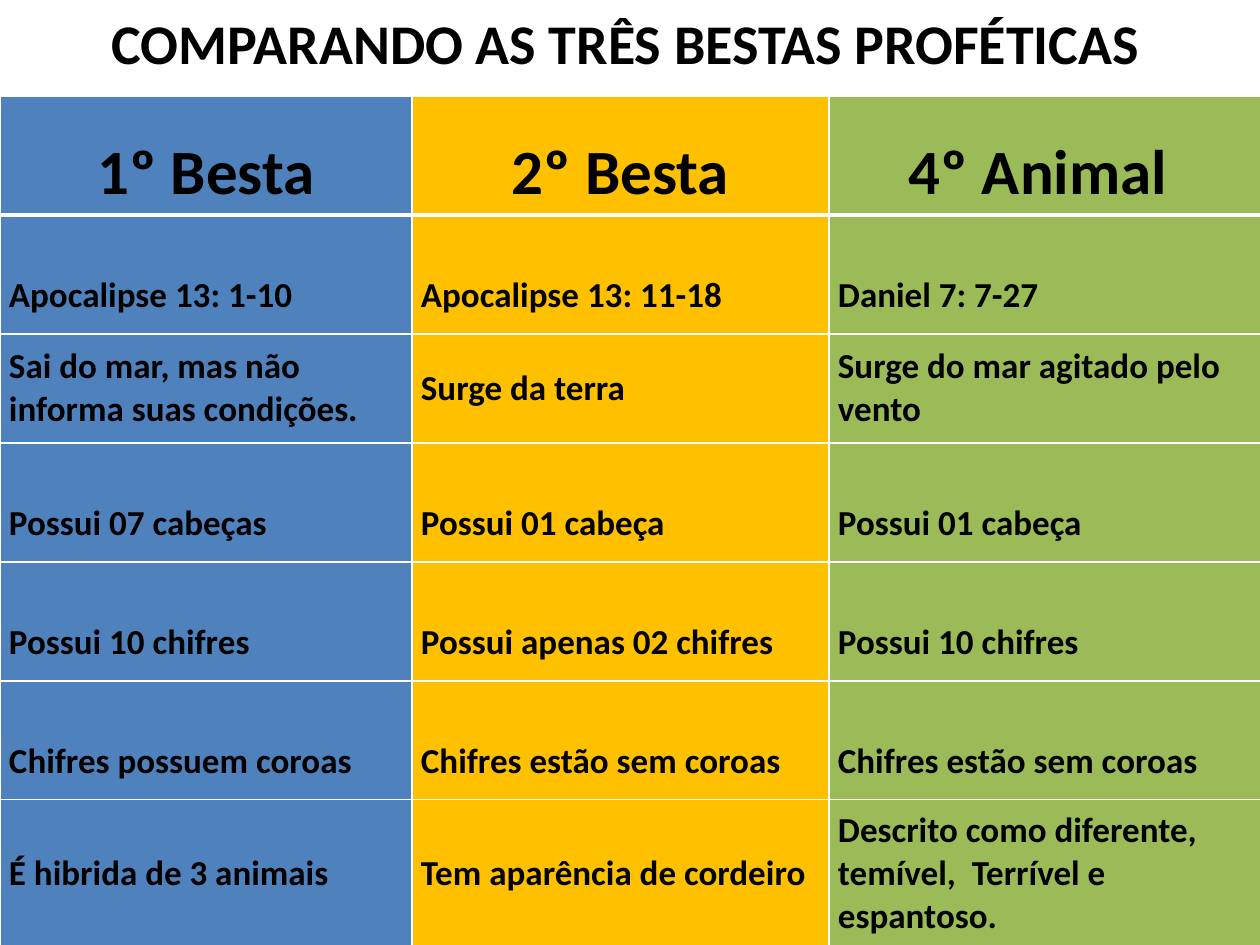
from lxml.etree import SubElement
from pptx import Presentation
from pptx.dml.color import RGBColor
from pptx.enum.text import MSO_ANCHOR as Anchor, MSO_AUTO_SIZE as AutoSize, PP_ALIGN as Align
from pptx.oxml.ns import qn
from pptx.util import Emu, Pt

PX_PER_INCH = 126
BLACK = RGBColor(0x00, 0x00, 0x00)
WHITE = RGBColor(0xFF, 0xFF, 0xFF)
BLUE = RGBColor(0x4F, 0x81, 0xBD)
GOLD = RGBColor(0xFF, 0xC0, 0x00)
GREEN = RGBColor(0x9B, 0xBB, 0x59)

COLUMNS = [(412, BLUE), (417, GOLD), (432, GREEN)]
# Row height, line spacing, one text per column; the first row is the header.
ROWS = [
    (119, 1.5, ["1º Besta", "2º Besta", "4º Animal "]),
    (119, 2.0, ["Apocalipse 13: 1-10", "Apocalipse 13: 11-18", "Daniel 7: 7-27"]),
    (109, 1.0, ["Sai do mar, mas não informa suas condições.", "Surge da terra",
                "Surge do mar agitado pelo vento"]),
    (119, 2.0, ["Possui 07 cabeças", "Possui 01 cabeça", "Possui 01 cabeça"]),
    (119, 2.0, ["Possui 10 chifres", "Possui apenas 02 chifres", "Possui 10 chifres"]),
    (119, 2.0, ["Chifres possuem coroas", "Chifres estão sem coroas",
                "Chifres estão sem coroas"]),
    (148, 1.0, ["É hibrida de 3 animais", "Tem aparência de cordeiro",
                "Descrito como diferente, temível,  Terrível e espantoso."]),
]


def px(n):
    return Emu(round(n * 914400 / PX_PER_INCH))


class SlideBuilder:
    font = "Calibri"
    color = BLACK

    def __init__(self, slide):
        self.slide = slide

    def text(self, tf, text, size, align=Align.LEFT, spacing=1.0):
        p = tf.paragraphs[0]
        p.alignment = align
        p.line_spacing = spacing
        r = p.add_run()
        r.text = text
        r.font.name = self.font
        r.font.size = Pt(size)
        r.font.bold = True
        r.font.color.rgb = self.color

    def title(self, text, x, y, w, h):
        sp = self.slide.shapes.title
        sp.left, sp.top, sp.width, sp.height = px(x), px(y), px(w), px(h)
        tf = sp.text_frame
        tf.word_wrap = True
        tf.auto_size = AutoSize.SHAPE_TO_FIT_TEXT
        tf.vertical_anchor = Anchor.TOP
        self.text(tf, text, 32, Align.CENTER)

    def borders(self, cell, top, bottom):
        """Draw white cell borders; top and bottom widths are in points."""
        tc_pr = cell._tc.get_or_add_tcPr()
        for tag, width in (("lnL", 1), ("lnR", 1), ("lnT", top), ("lnB", bottom)):
            ln = SubElement(tc_pr, qn(f"a:{tag}"), w=str(Pt(width)))
            fill = SubElement(ln, qn("a:solidFill"))
            SubElement(fill, qn("a:srgbClr"), val=str(WHITE))

    def cell(self, cell, text, fill, spacing, row):
        header = row == 0
        self.borders(cell, top=3 if row == 1 else 1, bottom=3 if header else 1)
        cell.fill.solid()
        cell.fill.fore_color.rgb = fill
        cell.margin_left = cell.margin_right = px(9)
        cell.margin_top = cell.margin_bottom = 0
        cell.vertical_anchor = Anchor.TOP if header else Anchor.MIDDLE
        self.text(cell.text_frame, text, 36 if header else 20,
                  Align.CENTER if header else Align.LEFT, spacing)

    def table(self, x, y, columns, rows):
        width = sum(w for w, _ in columns)
        height = sum(h for h, _, _ in rows)
        table = self.slide.shapes.add_table(
            len(rows), len(columns), px(x), px(y), px(width), px(height)).table
        for column, (w, _) in zip(table.columns, columns):
            column.width = px(w)
        for i, (h, spacing, texts) in enumerate(rows):
            table.rows[i].height = px(h)
            for j, (text, (_, fill)) in enumerate(zip(texts, columns)):
                self.cell(table.cell(i, j), text, fill, spacing, i)


def main():
    prs = Presentation()
    prs.slide_width, prs.slide_height = px(1260), px(945)
    s = SlideBuilder(prs.slides.add_slide(prs.slide_layouts[5]))
    s.table(0, 96, COLUMNS, ROWS)
    s.title("COMPARANDO AS TRÊS BESTAS PROFÉTICAS", -4, 2, 1260, 81)
    prs.save("out.pptx")


if __name__ == "__main__":
    main()
